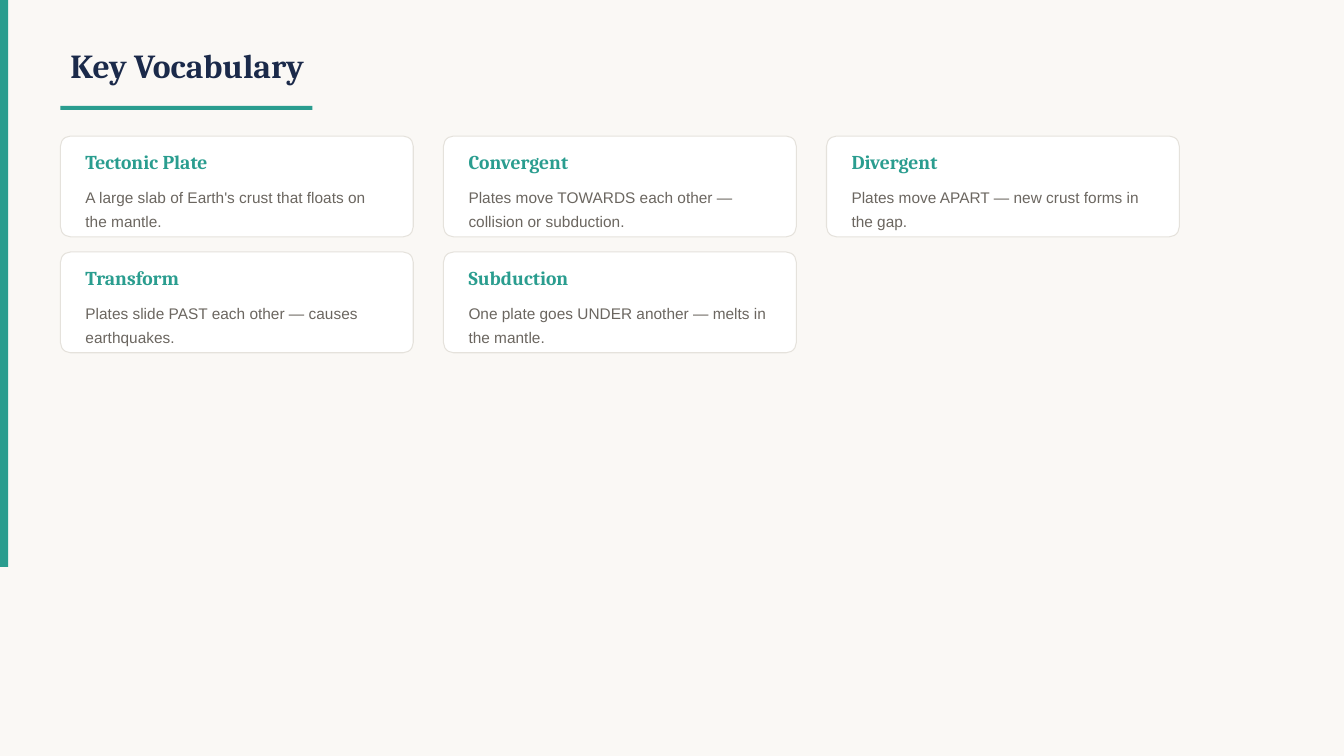
from dataclasses import dataclass

from pptx import Presentation
from pptx import util as u
from pptx.dml.color import RGBColor
from pptx.enum import shapes, text

CREAM = RGBColor(0xFA, 0xF8, 0xF5)
TEAL = RGBColor(0x2A, 0x9D, 0x8F)
NAVY = RGBColor(0x1B, 0x2A, 0x4A)
WHITE = RGBColor(0xFF, 0xFF, 0xFF)
BORDER = RGBColor(0xE5, 0xE2, 0xDC)
GREY = RGBColor(0x6B, 0x66, 0x60)

TITLE = {"name": "Cambria", "size": u.Pt(24), "bold": True}
TERM = {"name": "Cambria", "size": u.Pt(14), "bold": True}
MEANING = {"name": "Arial", "size": u.Pt(11)}

COLUMNS = 3
LEFT, TOP = 43.2, 97.2
CARD_WIDTH, CARD_HEIGHT = 252, 72
COLUMN_STEP, ROW_STEP = 273.6, 82.8


@dataclass(frozen=True)
class Box:
    """A rectangle in points."""
    left: float
    top: float
    width: float
    height: float

    def lengths(self) -> list[u.Length]:
        return [u.Pt(n) for n in (self.left, self.top, self.width, self.height)]


@dataclass(frozen=True)
class Entry:
    term: str
    meaning: str


ENTRIES = [
    Entry("Tectonic Plate", "A large slab of Earth's crust that floats on the mantle."),
    Entry("Convergent", "Plates move TOWARDS each other — collision or subduction."),
    Entry("Divergent", "Plates move APART — new crust forms in the gap."),
    Entry("Transform", "Plates slide PAST each other — causes earthquakes."),
    Entry("Subduction", "One plate goes UNDER another — melts in the mantle."),
]


def add_block(slide, kind: shapes.MSO_SHAPE, box: Box, fill: RGBColor):
    block = slide.shapes.add_shape(kind, *box.lengths())
    block.shadow.inherit = False
    block.fill.solid()
    block.fill.fore_color.rgb = fill
    block.line.fill.background()
    return block


def add_label(slide, box: Box, words: str, style: dict, color: RGBColor,
              spacing: float | None = None) -> None:
    frame = slide.shapes.add_textbox(*box.lengths()).text_frame
    frame.word_wrap = True
    frame.vertical_anchor = text.MSO_ANCHOR.MIDDLE
    paragraph = frame.paragraphs[0]
    paragraph.line_spacing = spacing
    run = paragraph.add_run()
    run.text = words
    for key, value in style.items():
        setattr(run.font, key, value)
    run.font.color.rgb = color


def add_card(slide, entry: Entry, left: float, top: float) -> None:
    card = add_block(slide, shapes.MSO_SHAPE.ROUNDED_RECTANGLE,
                     Box(left, top, CARD_WIDTH, CARD_HEIGHT), WHITE)
    card.adjustments[0] = 0.1
    card.line.color.rgb = BORDER
    card.line.width = u.Pt(0.75)
    text_left, text_width = left + 10.8, CARD_WIDTH - 21.6
    add_label(slide, Box(text_left, top + 5.76, text_width, 25.2), entry.term, TERM, TEAL)
    add_label(slide, Box(text_left, top + 32.4, text_width, 36), entry.meaning,
              MEANING, GREY, 1.3)


def main() -> None:
    deck = Presentation()
    deck.slide_width, deck.slide_height = u.Pt(960), u.Pt(540)
    slide = deck.slides.add_slide(deck.slide_layouts[6])
    slide.background.fill.solid()
    slide.background.fill.fore_color.rgb = CREAM

    add_block(slide, shapes.MSO_SHAPE.RECTANGLE, Box(0, 0, 5.76, 405), TEAL)
    add_label(slide, Box(LEFT, 21.6, 720, 50.4), "Key Vocabulary", TITLE, NAVY)
    add_block(slide, shapes.MSO_SHAPE.RECTANGLE, Box(LEFT, 75.6, 180, 2.88), TEAL)

    for index, entry in enumerate(ENTRIES):
        row, column = divmod(index, COLUMNS)
        add_card(slide, entry, LEFT + column * COLUMN_STEP, TOP + row * ROW_STEP)

    deck.save("out.pptx")


if __name__ == "__main__":
    main()
